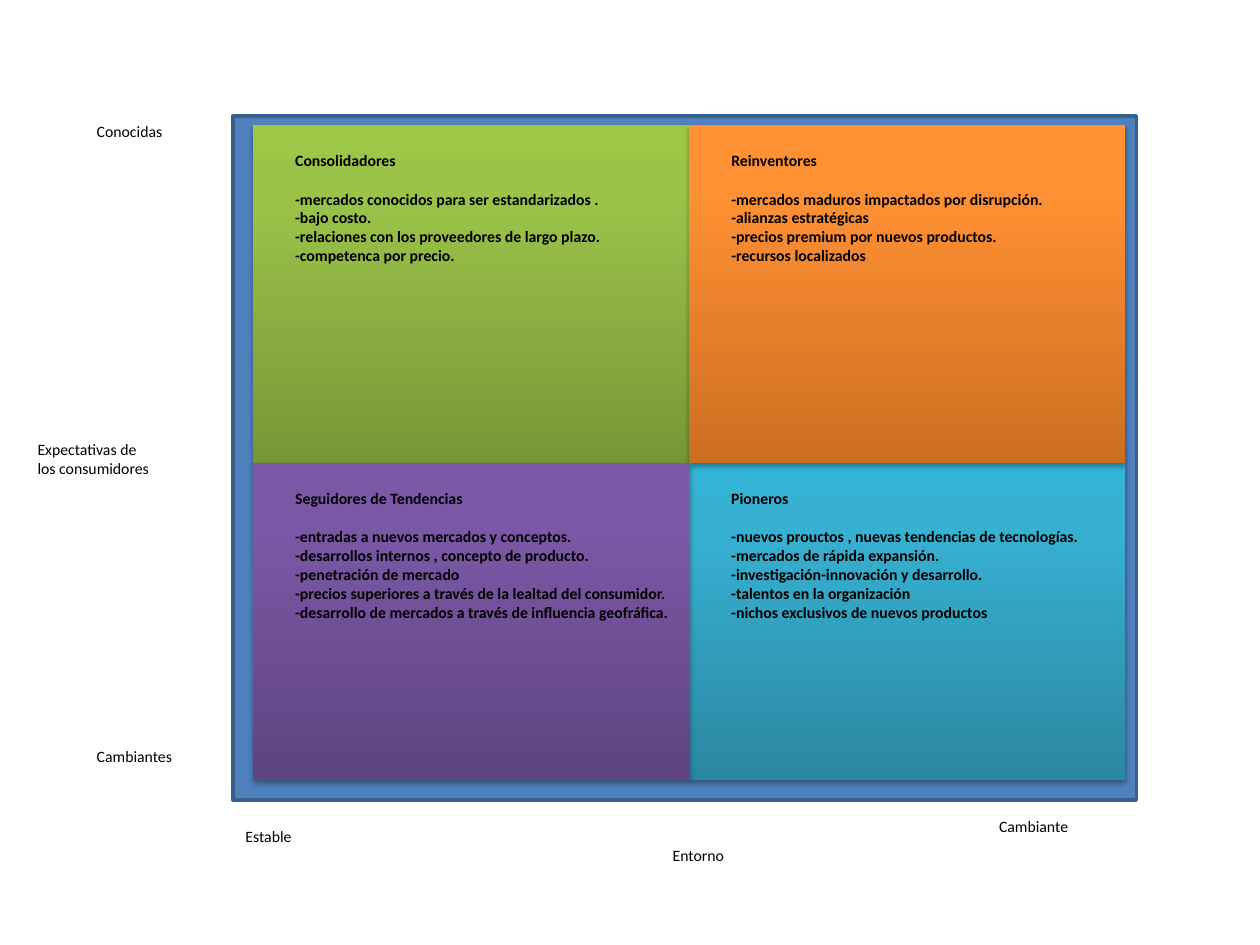
import copy
import pptx
import pptx.util
import pptx.dml.color
import pptx.enum.shapes
import pptx.enum.text
import pptx.oxml
import pptx.oxml.ns

Pt = pptx.util.Pt
RGB = pptx.dml.color.RGBColor.from_string
RECT = pptx.enum.shapes.MSO_SHAPE.RECTANGLE
hues = {
    "frame": "4F81BD", "edge": "3A5F8C", "text": "000000",
    "green": ("779737", "9BC348", "9DC746"),
    "cyan": ("2A88A2", "37B1D2", "34B4D6"),
    "orange": ("CC6E20", "FF9034", "FF9136"),
    "purple": ("5F4480", "7B58A6", "7C57A8"),
}
shade = (
    f'<a:outerShdw {pptx.oxml.ns.nsdecls("a")} blurRad="{Pt(3.1)}" dist="{Pt(1.8)}" '
    'dir="5400000" rotWithShape="0"><a:srgbClr val="000000">'
    '<a:alpha val="35000"/></a:srgbClr></a:outerShdw>'
)

deck = pptx.Presentation()
deck.slide_width, deck.slide_height = Pt(720), Pt(540)
slide = deck.slides.add_slide(deck.slide_layouts[6])
shapes = slide.shapes


def add_text(left, top, width, height, lines, bold=False):
    box = shapes.add_textbox(Pt(left), Pt(top), Pt(width), Pt(height))
    frame = box.text_frame
    frame.word_wrap = False
    frame.auto_size = pptx.enum.text.MSO_AUTO_SIZE.SHAPE_TO_FIT_TEXT
    frame.text = "\n".join(lines)
    for para in frame.paragraphs:
        para.font.name = "Calibri"
        para.font.size = Pt(9)
        para.font.bold = bold
        para.font.color.rgb = RGB(hues["text"])
    return frame


frame = shapes.add_shape(RECT, Pt(133.2), Pt(66.2), Pt(516.2), Pt(391))
frame.shadow.inherit = False
frame.fill.solid()
frame.fill.fore_color.rgb = RGB(hues["frame"])
frame.line.color.rgb = RGB(hues["edge"])
frame.line.width = Pt(2)

wide = 249.2
cols = (144.6, 144.6 + wide)
rows = (71.4, 264.4)
highs = (193, 181.4)

quads = [
    ("green", 0, 0, 192.2, [
        "Consolidadores",
        "-mercados conocidos para ser estandarizados .",
        "-bajo costo.",
        "-relaciones con los proveedores de largo plazo.",
        "-competenca por precio.",
    ]),
    ("cyan", 1, 1, 216, [
        "Pioneros",
        "-nuevos prouctos , nuevas tendencias de tecnologías.",
        "-mercados de rápida expansión.",
        "-investigación-innovación y desarrollo.",
        "-talentos en la organización",
        "-nichos exclusivos de nuevos productos",
    ]),
    ("orange", 1, 0, 195.8, [
        "Reinventores",
        "-mercados maduros impactados por disrupción.",
        "-alianzas estratégicas",
        "-precios premium por nuevos productos.",
        "-recursos localizados",
    ]),
    ("purple", 0, 1, 230.4, [
        "Seguidores de Tendencias",
        "-entradas a nuevos mercados y conceptos.",
        "-desarrollos internos , concepto de producto.",
        "-penetración de mercado",
        "-precios superiores a través de la lealtad del consumidor.",
        "-desarrollo de mercados a través de influencia geofráfica.",
    ]),
]

for hue, col, row, width, lines in quads:
    quad = shapes.add_shape(RECT, Pt(cols[col]), Pt(rows[row]), Pt(wide), Pt(highs[row]))
    quad.line.fill.background()
    quad.fill.gradient()
    quad.fill.gradient_angle = 90
    props = quad._element.spPr
    stops = props.find(".//" + pptx.oxml.ns.qn("a:gsLst"))
    stops.insert(1, copy.deepcopy(stops[0]))
    for stop, place, tone in zip(quad.fill.gradient_stops, (0, 0.8, 1), hues[hue]):
        stop.position = place
        stop.color.rgb = RGB(tone)
    quad.shadow.inherit = False
    props.find(pptx.oxml.ns.qn("a:effectLst")).append(pptx.oxml.parse_xml(shade))

for hue, col, row, width, lines in quads:
    body = add_text(cols[col] + 17, rows[row] + 11.4, width, 11 * len(lines) + 18.2, lines, True)
    body.paragraphs[0].space_after = Pt(11)

labels = [
    (14.4, 247.7, 79.2, 28.8, ["Expectativas de", "los consumidores"]),
    (377.3, 479.5, 44.6, 18, ["Entorno"]),
    (48.2, 66.2, 52.6, 18, ["Conocidas"]),
    (48.2, 423.4, 58.3, 18, ["Cambiantes"]),
    (563.8, 463, 54.7, 18, ["Cambiante"]),
    (133.2, 468.7, 41, 18, ["Estable"]),
]
for label in labels:
    add_text(*label)

deck.save("out.pptx")
